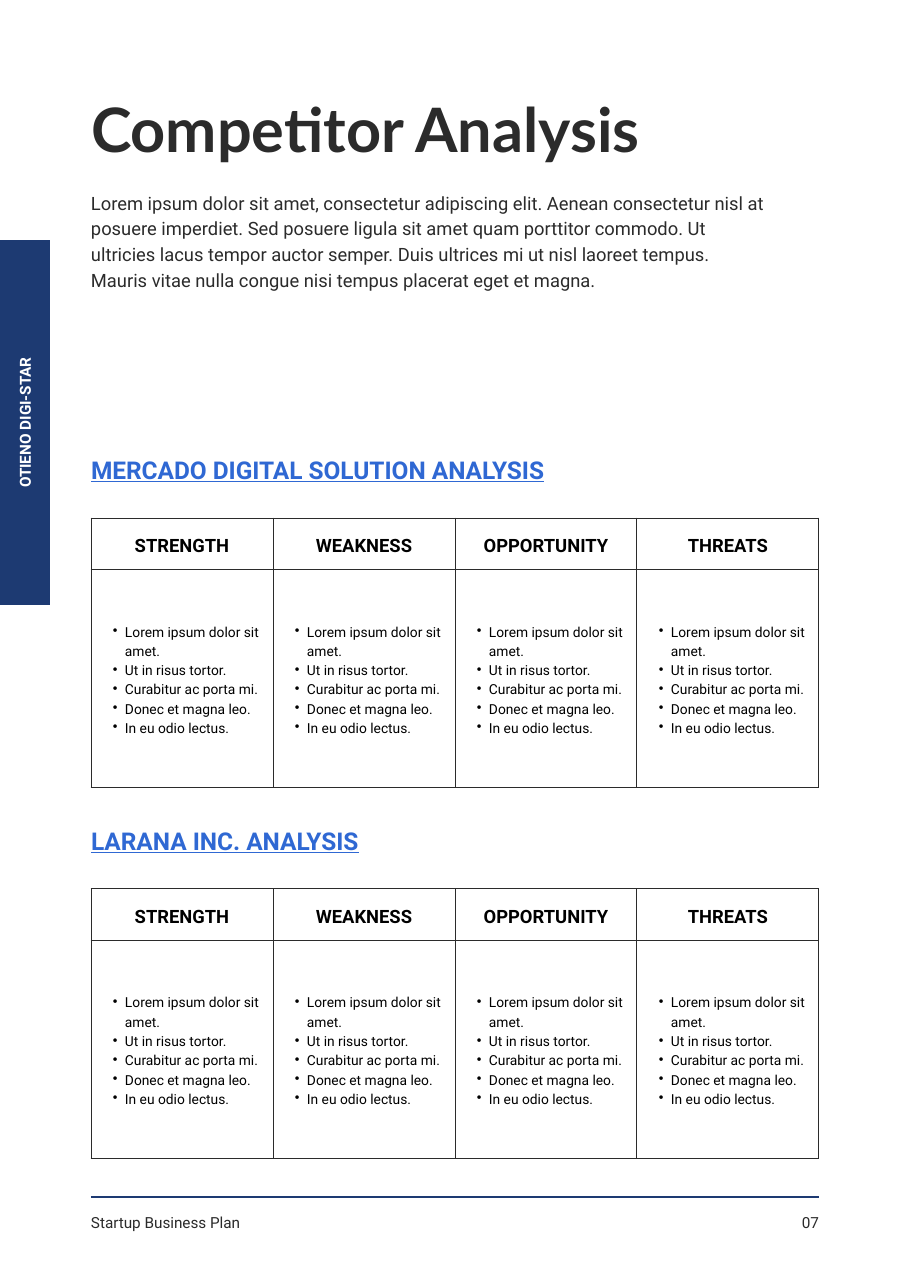
"""Build the competitor analysis page of a startup business plan."""
from lxml import etree
from pptx import Presentation
from pptx.dml.color import RGBColor
from pptx.enum.shapes import MSO_CONNECTOR, MSO_SHAPE
from pptx.enum.text import MSO_ANCHOR, MSO_AUTO_SIZE, PP_ALIGN
from pptx.oxml.ns import qn
from pptx.util import Pt

LEFT, CENTER, RIGHT = PP_ALIGN.LEFT, PP_ALIGN.CENTER, PP_ALIGN.RIGHT
MIDDLE = MSO_ANCHOR.MIDDLE
GROW = MSO_AUTO_SIZE.SHAPE_TO_FIT_TEXT
RECTANGLE = MSO_SHAPE.RECTANGLE
STRAIGHT = MSO_CONNECTOR.STRAIGHT

TITLE = "Competitor Analysis"
INTRO = [
    "Lorem ipsum dolor sit amet, consectetur adipiscing elit. Aenean consectetur nisl at "
    "posuere imperdiet. Sed posuere ligula sit amet quam porttitor commodo. Ut",
    "ultricies lacus tempor auctor semper. Duis ultrices mi ut nisl laoreet tempus.",
    "Mauris vitae nulla congue nisi tempus placerat eget et magna.",
]
COMPANY = "OTIENO DIGI-STAR"
SECTIONS = ["MERCADO DIGITAL SOLUTION ANALYSIS", "LARANA INC. ANALYSIS"]
COLUMNS = ["STRENGTH", "WEAKNESS", "OPPORTUNITY", "THREATS"]
POINTS = [
    "Lorem ipsum dolor sit amet.",
    "Ut in risus tortor.",
    "Curabitur ac porta mi.",
    "Donec et magna leo.",
    "In eu odio lectus.",
]
FOOTER, PAGE_NUMBER = "Startup Business Plan", "07"

NAVY, INK, BLUE, BLACK, WHITE = "1D3A72", "2B2B2B", "2F68D3", "000000", "FFFFFF"
THEME = {
    "line": 0.75,
    "title": {"font": {"name": "Lato", "size": Pt(40), "bold": True}, "color": INK, "leading": 48},
    "intro": {"font": {"name": "Roboto", "size": Pt(12)}, "color": INK, "leading": 16.8},
    "company": {"font": {"name": "Roboto", "size": Pt(10), "bold": True}, "color": WHITE, "leading": 14},
    "heading": {"font": {"name": "Roboto", "size": Pt(16), "bold": True, "underline": True},
                "color": BLUE, "leading": 22.4},
    "column": {"font": {"name": "Roboto", "size": Pt(12), "bold": True}, "color": BLACK, "leading": 16.8},
    "point": {"font": {"name": "Roboto", "size": Pt(9), "bold": False}, "color": BLACK, "leading": 12.6},
    "footer": {"font": {"name": "Roboto", "size": Pt(10)}, "color": INK, "leading": 14},
}

EMU_PER_PX = 8298
PAGE_WIDTH, PAGE_HEIGHT = 910, 1288
MARGIN, COLUMN_WIDTH = 91, 182
CONTENT_WIDTH = COLUMN_WIDTH * len(COLUMNS)
CONTENT_RIGHT = MARGIN + CONTENT_WIDTH
SIDEBAR_TOP, SIDEBAR_WIDTH, SIDEBAR_HEIGHT = 240, 50, 365
COMPANY_WIDTH, COMPANY_HEIGHT, COMPANY_AXIS = 311, 21, 23
SECTION_TOP, SECTION_STEP, TABLE_OFFSET = 450, 371, 68
ROW_HEIGHTS = [52, 218]
CELL_MARGIN, BULLET_LEFT, BULLET_HANG = 11, 23, 12
RULE_Y, FOOTER_Y, FOOTER_WIDTH, FOOTER_HEIGHT = 1197, 1210, 225, 21


def px(length):
    return round(length * EMU_PER_PX)


def set_values(target, values):
    for name, value in values.items():
        setattr(target, name, value)


def write(frame, lines, style_name, align=LEFT, bulleted=False):
    style = THEME[style_name]
    for index, line in enumerate(lines):
        paragraph = frame.add_paragraph() if index else frame.paragraphs[0]
        set_values(paragraph, {"alignment": align, "line_spacing": Pt(style["leading"])})
        run = paragraph.add_run()
        run.text = line
        set_values(run.font, style["font"])
        run.font.color.rgb = RGBColor.from_string(style["color"])
        if bulleted:
            paragraph.level = 1
            properties = paragraph._p.get_or_add_pPr()
            properties.set("marL", str(px(BULLET_LEFT)))
            properties.set("indent", str(-px(BULLET_HANG)))
            etree.SubElement(properties, qn("a:buChar"), char="•")


def add_text(slide, box, lines, style_name, align=LEFT, rotation=0):
    shape = slide.shapes.add_textbox(*map(px, box))
    shape.rotation = rotation
    set_values(shape.text_frame, {
        "word_wrap": True, "auto_size": GROW, "margin_left": 0,
        "margin_right": 0, "margin_top": 0, "margin_bottom": 0,
    })
    write(shape.text_frame, lines, style_name, align)


def style_cell(cell):
    sides = ("left", "right", "top", "bottom")
    set_values(cell, {f"margin_{side}": px(CELL_MARGIN) for side in sides})
    cell.vertical_anchor = MIDDLE
    cell.fill.background()
    properties = cell._tc.get_or_add_tcPr()
    for index, side in enumerate(sides):
        border = etree.Element(qn(f"a:ln{side[0].upper()}"), w=str(Pt(THEME["line"])))
        fill = etree.SubElement(border, qn("a:solidFill"))
        etree.SubElement(fill, qn("a:srgbClr"), val=INK)
        properties.insert(index, border)


def add_swot_table(slide, top):
    box = (MARGIN, top, CONTENT_WIDTH, sum(ROW_HEIGHTS))
    table = slide.shapes.add_table(len(ROW_HEIGHTS), len(COLUMNS), *map(px, box)).table
    set_values(table, {"first_row": False, "horz_banding": False})
    for row, height in zip(table.rows, ROW_HEIGHTS):
        row.height = px(height)
    for index, name in enumerate(COLUMNS):
        table.columns[index].width = px(COLUMN_WIDTH)
        header, body = table.cell(0, index), table.cell(1, index)
        style_cell(header)
        style_cell(body)
        write(header.text_frame, [name], "column", CENTER)
        write(body.text_frame, POINTS, "point", bulleted=True)


def add_sidebar(slide):
    sidebar = slide.shapes.add_shape(
        RECTANGLE, 0, px(SIDEBAR_TOP), px(SIDEBAR_WIDTH), px(SIDEBAR_HEIGHT))
    sidebar.shadow.inherit = False
    sidebar.fill.solid()
    sidebar.fill.fore_color.rgb = RGBColor.from_string(NAVY)
    sidebar.line.fill.background()
    left = COMPANY_AXIS - COMPANY_WIDTH / 2
    top = SIDEBAR_TOP + (SIDEBAR_HEIGHT - COMPANY_HEIGHT) / 2
    add_text(slide, (left, top, COMPANY_WIDTH, COMPANY_HEIGHT), [COMPANY], "company", CENTER, 270)


def add_footer(slide):
    rule = slide.shapes.add_connector(
        STRAIGHT, *map(px, (MARGIN, RULE_Y, CONTENT_RIGHT, RULE_Y)))
    rule.line.color.rgb = RGBColor.from_string(NAVY)
    rule.line.width = Pt(THEME["line"])
    etree.SubElement(rule._element.spPr, qn("a:effectLst"))
    for left, text, align in ((MARGIN, FOOTER, LEFT),
                              (CONTENT_RIGHT - FOOTER_WIDTH, PAGE_NUMBER, RIGHT)):
        add_text(slide, (left, FOOTER_Y, FOOTER_WIDTH, FOOTER_HEIGHT), [text], "footer", align)


def main():
    presentation = Presentation()
    set_values(presentation, {"slide_width": px(PAGE_WIDTH), "slide_height": px(PAGE_HEIGHT)})
    slide = presentation.slides.add_slide(presentation.slide_layouts[6])
    add_sidebar(slide)
    add_text(slide, (MARGIN, 91, 761, 74), [TITLE], "title")
    add_text(slide, (MARGIN, 188, CONTENT_WIDTH, 100), INTRO, "intro")
    for index, heading in enumerate(SECTIONS):
        top = SECTION_TOP + index * SECTION_STEP
        add_text(slide, (MARGIN, top, 527, 33), [heading], "heading")
        add_swot_table(slide, top + TABLE_OFFSET)
    add_footer(slide)
    presentation.save("out.pptx")


if __name__ == "__main__":
    main()
